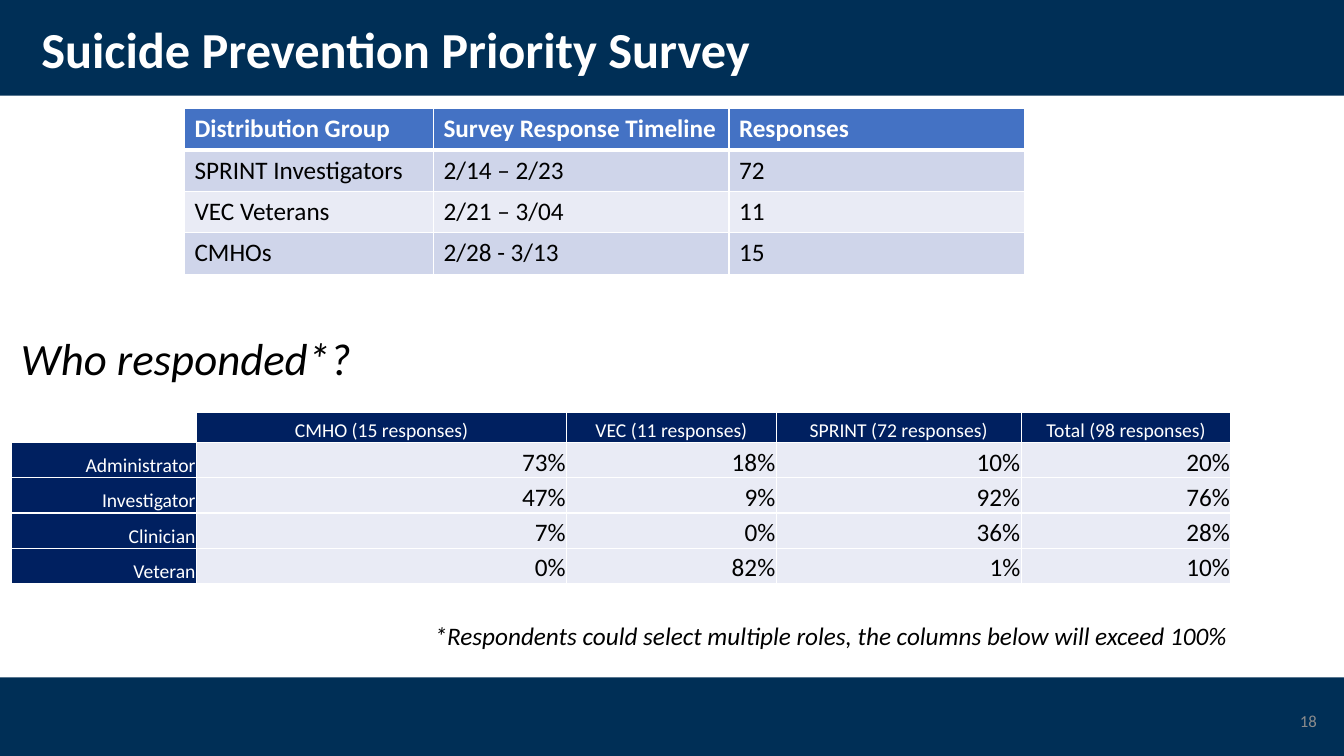
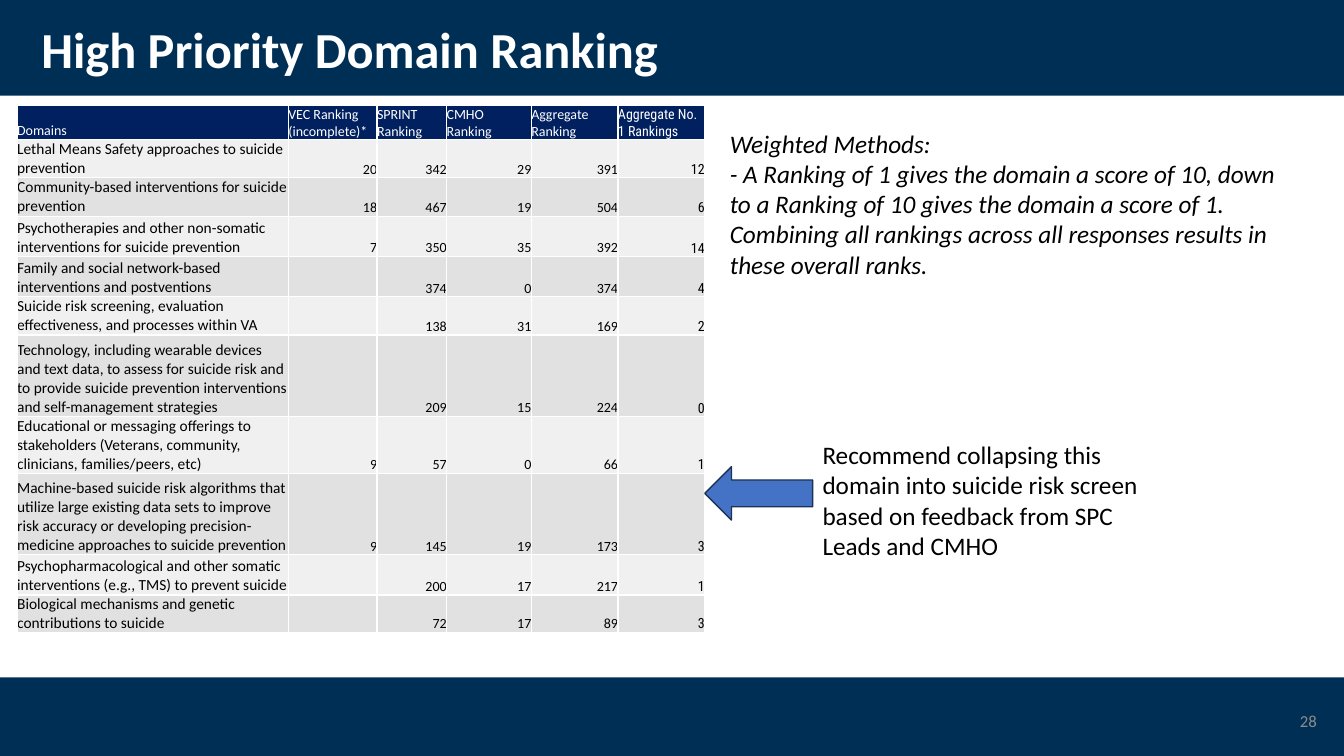
from collections.abc import Callable, Sequence
from dataclasses import dataclass

from lxml.etree import SubElement
from pptx import Presentation
from pptx.dml.color import RGBColor
from pptx.enum.shapes import MSO_SHAPE
from pptx.enum.text import MSO_ANCHOR, MSO_AUTO_SIZE, PP_ALIGN
from pptx.oxml.ns import qn
from pptx.slide import Slide
from pptx.table import _Cell
from pptx.util import Inches, Pt


@dataclass(frozen=True)
class Theme:
    band: str = "002F56"
    header: str = "002060"
    accent: str = "4472C4"
    accent_line: str = "1E3256"
    white: str = "FFFFFF"
    black: str = "000000"
    page_number: str = "8C8C8C"
    blue_rows: tuple[str, str] = ("CFD5EA", "E9EBF5")
    grey_rows: tuple[str, str] = ("F0F0F0", "E1E1E1")
    font: str = "Calibri"
    condensed: str = "Roboto Condensed"
    title_size: float = 36
    heading_size: float = 32
    body_size: float = 18
    label_size: float = 14
    page_size: float = 12
    domain_size: float = 11
    score_size: float = 10


THEME = Theme()


@dataclass(frozen=True)
class Box:
    left: float
    top: float
    width: float
    height: float

    def lengths(self) -> tuple[Inches, Inches, Inches, Inches]:
        return Inches(self.left), Inches(self.top), Inches(self.width), Inches(self.height)


@dataclass(frozen=True)
class TextStyle:
    size: float
    color: str = THEME.black
    font: str = THEME.font
    bold: bool = False
    italic: bool = False
    align: PP_ALIGN = PP_ALIGN.LEFT


@dataclass(frozen=True)
class CellStyle:
    text: TextStyle
    fill: str


@dataclass(frozen=True)
class TableDesign:
    left: float
    top: float
    columns: Sequence[float]
    rows: Sequence[float]
    style: Callable[[int, int], CellStyle]
    margins: tuple[float, float, float, float]
    anchor: MSO_ANCHOR = MSO_ANCHOR.BOTTOM
    header_rule: float = 1


SLIDE_WIDTH, SLIDE_HEIGHT = 13.33, 7.5
BANDS = (Box(0, 0, SLIDE_WIDTH, 0.95), Box(0, 6.72, SLIDE_WIDTH, 0.78))
TITLE_BOX = Box(0.31, 0.18, 11.5, 0.68)
PAGE_BOX = Box(10.16, 6.95, 3, 0.4)

BODY = TextStyle(THEME.body_size)
BODY_ITALIC = TextStyle(THEME.body_size, italic=True)

TIMELINE = (
    ("Distribution Group", "Survey Response Timeline", "Responses"),
    ("SPRINT Investigators", "2/14 – 2/23", "72"),
    ("VEC Veterans", "2/21 – 3/04", "11"),
    ("CMHOs", "2/28 - 3/13", "15"),
)
ROLES = (
    ("", "CMHO (15 responses)", "VEC (11 responses)", "SPRINT (72 responses)", "Total (98 responses)"),
    ("Administrator", "73%", "18%", "10%", "20%"),
    ("Investigator", "47%", "9%", "92%", "76%"),
    ("Clinician", "7%", "0%", "36%", "28%"),
    ("Veteran", "0%", "82%", "1%", "10%"),
)
DOMAINS = (
    ("Domains", "VEC Ranking (incomplete)*", "SPRINT\vRanking", "CMHO Ranking",
     "Aggregate Ranking", "Aggregate No. 1 Rankings"),
    ("Lethal Means Safety approaches to suicide prevention", "20", "342", "29", "391", "12"),
    ("Community-based interventions for suicide prevention", "18", "467", "19", "504", "6"),
    ("Psychotherapies and other non-somatic interventions for suicide prevention",
     "7", "350", "35", "392", "14"),
    ("Family and social network-based interventions and postventions", "", "374", "0", "374", "4"),
    ("Suicide risk screening, evaluation effectiveness, and processes within VA",
     "", "138", "31", "169", "2"),
    ("Technology, including wearable devices and text data, to assess for suicide risk and to "
     "provide suicide prevention interventions and self-management strategies",
     "", "209", "15", "224", "0"),
    ("Educational or messaging offerings to stakeholders (Veterans, community, clinicians, "
     "families/peers, etc)", "9", "57", "0", "66", "1"),
    ("Machine-based suicide risk algorithms that utilize large existing data sets to improve risk "
     "accuracy or developing precision-medicine approaches to suicide prevention",
     "9", "145", "19", "173", "3"),
    ("Psychopharmacological and other somatic interventions (e.g., TMS) to prevent suicide",
     "", "200", "17", "217", "1"),
    ("Biological mechanisms and genetic contributions to suicide", "", "72", "17", "89", "3"),
)


def timeline_style(row: int, column: int) -> CellStyle:
    if row == 0:
        return CellStyle(TextStyle(THEME.body_size, THEME.white, bold=True), THEME.accent)
    return CellStyle(BODY, THEME.blue_rows[(row - 1) % 2])


def role_style(row: int, column: int) -> CellStyle:
    if row and column:
        return CellStyle(TextStyle(THEME.body_size, align=PP_ALIGN.RIGHT), THEME.blue_rows[1])
    align = PP_ALIGN.RIGHT if row else PP_ALIGN.CENTER
    fill = THEME.header if row or column else THEME.white
    return CellStyle(TextStyle(THEME.label_size, THEME.white, align=align), fill)


def domain_style(row: int, column: int) -> CellStyle:
    font = THEME.condensed if column == 5 else THEME.font
    if row == 0:
        return CellStyle(TextStyle(THEME.score_size, THEME.white, font), THEME.header)
    fill = THEME.grey_rows[(row - 1) % 2]
    if column == 0:
        return CellStyle(TextStyle(THEME.domain_size), fill)
    return CellStyle(TextStyle(THEME.score_size, font=font, align=PP_ALIGN.RIGHT), fill)


TIMELINE_DESIGN = TableDesign(
    1.83, 1.08, (2.47, 2.93, 2.93), (0.41,) * 4, timeline_style,
    (0.1, 0.05, 0.1, 0.05), MSO_ANCHOR.TOP, header_rule=3)
ROLE_DESIGN = TableDesign(
    0.11, 4.09, (1.84, 3.67, 2.08, 2.43, 2.08), (0.3,) + (0.35,) * 4, role_style,
    (0.01, 0.01, 0.01, 0))
DOMAIN_DESIGN = TableDesign(
    0.17, 1.05, (2.69, 0.88, 0.69, 0.84, 0.86, 0.86),
    (0.33, 0.38, 0.38, 0.4, 0.4, 0.38, 0.81, 0.56, 0.81, 0.4, 0.36), domain_style, (0, 0, 0, 0))


def write(text_frame, lines: Sequence[str], style: TextStyle) -> None:
    for index, line in enumerate(lines):
        paragraph = text_frame.paragraphs[0] if index == 0 else text_frame.add_paragraph()
        paragraph.text = line
        paragraph.alignment = style.align
        font = paragraph.font
        font.name = style.font
        font.size = Pt(style.size)
        font.bold = style.bold
        font.italic = style.italic
        font.color.rgb = RGBColor.from_string(style.color)


def add_text(slide: Slide, box: Box, lines: Sequence[str], style: TextStyle,
             anchor: MSO_ANCHOR = MSO_ANCHOR.TOP) -> None:
    text_frame = slide.shapes.add_textbox(*box.lengths()).text_frame
    text_frame.word_wrap = True
    text_frame.vertical_anchor = anchor
    write(text_frame, lines, style)


def add_filled_shape(slide: Slide, kind: MSO_SHAPE, box: Box, fill: str, line: str | None = None):
    shape = slide.shapes.add_shape(kind, *box.lengths())
    shape.shadow.inherit = False
    shape.fill.solid()
    shape.fill.fore_color.rgb = RGBColor.from_string(fill)
    if line:
        shape.line.color.rgb = RGBColor.from_string(line)
        shape.line.width = Pt(1)
    else:
        shape.line.fill.background()
    return shape


def set_borders(cell: _Cell, bottom_width: float) -> None:
    properties = cell._tc.get_or_add_tcPr()
    for side, width in (("L", 1), ("R", 1), ("T", 1), ("B", bottom_width)):
        border = SubElement(properties, qn(f"a:ln{side}"), w=str(Pt(width)))
        fill = SubElement(border, qn("a:solidFill"))
        SubElement(fill, qn("a:srgbClr"), val=THEME.white)


def add_data_table(slide: Slide, design: TableDesign, data: Sequence[Sequence[str]]) -> None:
    box = Box(design.left, design.top, sum(design.columns), sum(design.rows))
    table = slide.shapes.add_table(len(design.rows), len(design.columns), *box.lengths()).table
    table.first_row = table.horz_banding = False
    for column, width in zip(table.columns, design.columns):
        column.width = Inches(width)
    for row_index, (row, height) in enumerate(zip(table.rows, design.rows)):
        row.height = Inches(height)
        for column_index, cell in enumerate(row.cells):
            style = design.style(row_index, column_index)
            set_borders(cell, design.header_rule if row_index == 0 else 1)
            cell.fill.solid()
            cell.fill.fore_color.rgb = RGBColor.from_string(style.fill)
            cell.vertical_anchor = design.anchor
            (cell.margin_left, cell.margin_top,
             cell.margin_right, cell.margin_bottom) = map(Inches, design.margins)
            write(cell.text_frame, (data[row_index][column_index],), style.text)


def add_framed_slide(presentation, title_text: str, page: int) -> Slide:
    slide = presentation.slides.add_slide(presentation.slide_layouts[5])
    title = slide.shapes.title
    for box in BANDS:
        band = add_filled_shape(slide, MSO_SHAPE.RECTANGLE, box, THEME.band)
        title.element.addprevious(band.element)
    title.left, title.top, title.width, title.height = TITLE_BOX.lengths()
    title.text_frame.auto_size = MSO_AUTO_SIZE.NONE
    title.text_frame.vertical_anchor = MSO_ANCHOR.MIDDLE
    write(title.text_frame, (title_text,), TextStyle(THEME.title_size, THEME.white, bold=True))
    title.text_frame.paragraphs[0].line_spacing = 0.9
    page_style = TextStyle(THEME.page_size, THEME.page_number, align=PP_ALIGN.RIGHT)
    add_text(slide, PAGE_BOX, (str(page),), page_style, MSO_ANCHOR.MIDDLE)
    return slide


def build_survey_slide(presentation) -> None:
    slide = add_framed_slide(presentation, "Suicide Prevention Priority Survey", 18)
    add_data_table(slide, TIMELINE_DESIGN, TIMELINE)
    add_data_table(slide, ROLE_DESIGN, ROLES)
    add_text(slide, Box(0.11, 3.23, 11.5, 0.64), ("Who responded*?",),
             TextStyle(THEME.heading_size, italic=True))
    add_text(slide, Box(0.83, 6.11, 11.44, 0.4),
             ("*Respondents could select multiple roles, the columns below will exceed 100%",),
             TextStyle(THEME.body_size, italic=True, align=PP_ALIGN.RIGHT))


def build_ranking_slide(presentation) -> None:
    slide = add_framed_slide(presentation, "High Priority Domain Ranking", 28)
    add_text(slide, Box(7.14, 1.22, 5.81, 1.62), (
        "Weighted Methods:",
        "- A Ranking of 1 gives the domain a score of 10, down to a Ranking of 10 gives the domain "
        "a score of 1. Combining all rankings across all responses results in these overall ranks.",
    ), BODY_ITALIC)
    add_data_table(slide, DOMAIN_DESIGN, DOMAINS)
    add_filled_shape(slide, MSO_SHAPE.LEFT_ARROW, Box(6.99, 4.63, 1.07, 0.53),
                     THEME.accent, THEME.accent_line)
    add_text(slide, Box(8.06, 4.31, 3.4, 1.31), (
        "Recommend collapsing this domain into suicide risk screen based on feedback from SPC "
        "Leads and CMHO",), BODY)


def main() -> None:
    presentation = Presentation()
    presentation.slide_width = Inches(SLIDE_WIDTH)
    presentation.slide_height = Inches(SLIDE_HEIGHT)
    build_survey_slide(presentation)
    build_ranking_slide(presentation)
    presentation.save("out.pptx")


if __name__ == "__main__":
    main()
